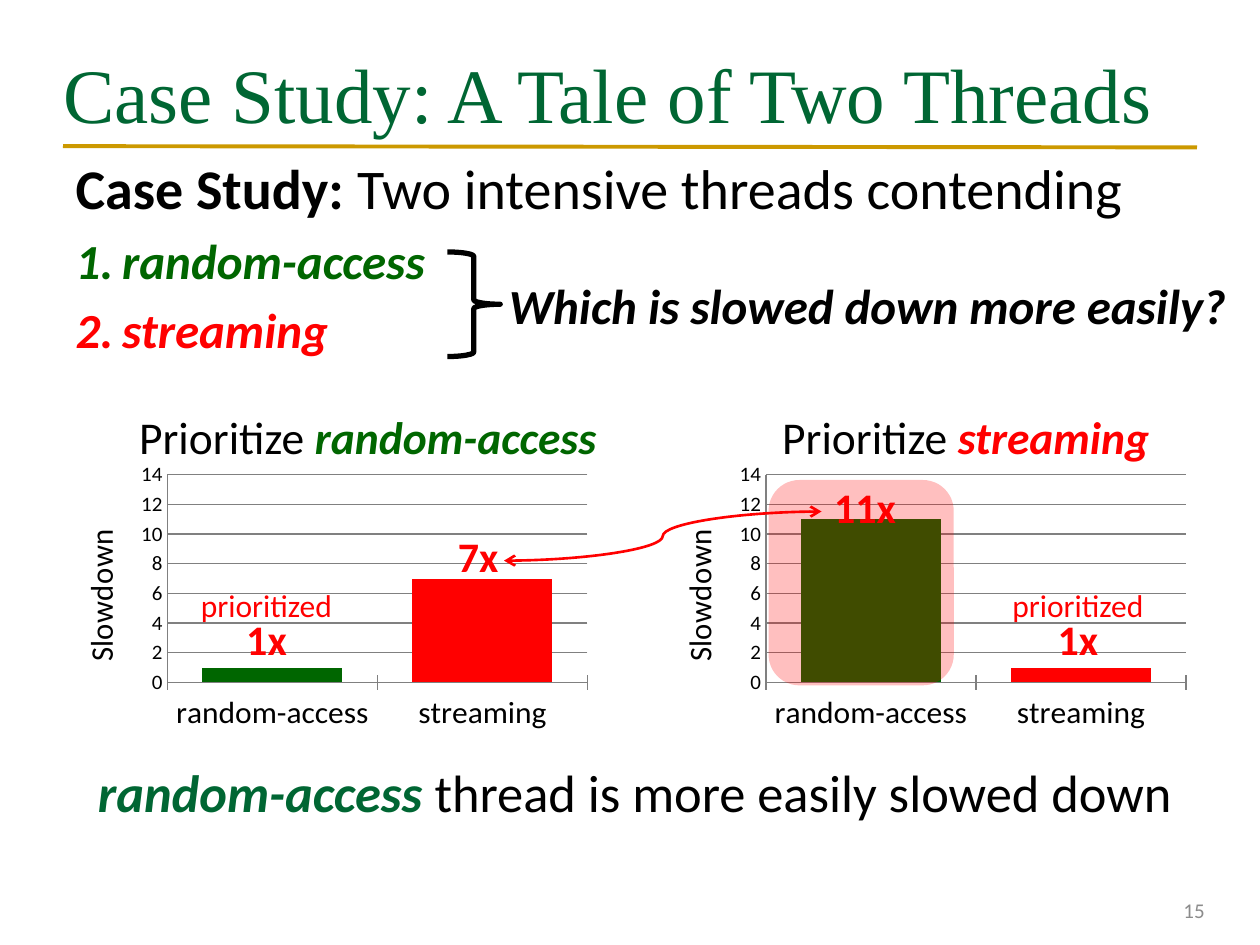
from lxml import etree
from pptx import Presentation
from pptx.chart.data import CategoryChartData
from pptx.dml.color import RGBColor
from pptx.enum.chart import XL_CHART_TYPE, XL_TICK_LABEL_POSITION, XL_TICK_MARK
from pptx.enum.shapes import MSO_CONNECTOR, MSO_SHAPE
from pptx.enum.text import MSO_ANCHOR, MSO_AUTO_SIZE, PP_ALIGN
from pptx.oxml.ns import qn
from pptx.util import Inches, Pt

COLUMN = XL_CHART_TYPE.COLUMN_CLUSTERED
LOW = XL_TICK_LABEL_POSITION.LOW
CROSS, INSIDE, NONE = XL_TICK_MARK.CROSS, XL_TICK_MARK.INSIDE, XL_TICK_MARK.NONE
STRAIGHT, CURVE = MSO_CONNECTOR.STRAIGHT, MSO_CONNECTOR.CURVE
ROUND, BRACE = MSO_SHAPE.ROUNDED_RECTANGLE, MSO_SHAPE.RIGHT_BRACE
TOP, MIDDLE = MSO_ANCHOR.TOP, MSO_ANCHOR.MIDDLE
LEFT, CENTER, RIGHT = PP_ALIGN.LEFT, PP_ALIGN.CENTER, PP_ALIGN.RIGHT
FIXED = MSO_AUTO_SIZE.NONE

COLORS = {
    "black": "000000", "red": "FF0000", "green": "006600", "title": "006633",
    "gold": "CC9900", "grid": "808080", "page": "8C8C8C",
}
THREADS = ("random-access", "streaming")
HUES = ("green", "red")


class Deck:
    """Holds the style and current slide, and draws each kind of element."""

    def __init__(self):
        self.prs = Presentation()
        self.prs.slide_width, self.prs.slide_height = Inches(10), Inches(7.5)
        self.slide = self.prs.slides.add_slide(self.prs.slide_layouts[1])
        self.face = "Calibri"

    def color(self, name):
        return RGBColor.from_string(COLORS[name])

    def font(self, font, size, hue="black", style="", face=None):
        font.name, font.size = face or self.face, Pt(size)
        font.color.rgb = self.color(hue)
        font.bold, font.italic = "b" in style, "i" in style

    def place(self, shape, box):
        shape.left, shape.top, shape.width, shape.height = map(Inches, box)

    def fill(self, para, runs):
        for text, *look in runs:
            run = para.add_run()
            run.text = text
            self.font(run.font, *look)

    def frame(self, shape, paras, align, anchor, pad, space):
        frame = shape.text_frame
        frame.word_wrap, frame.auto_size = True, FIXED
        frame.vertical_anchor = anchor
        frame.margin_left = frame.margin_right = Inches(pad[0])
        frame.margin_top = frame.margin_bottom = Inches(pad[1])
        for i, runs in enumerate(paras):
            para = frame.add_paragraph() if i else frame.paragraphs[0]
            para.alignment = align
            if space:
                para.line_spacing = space
            self.fill(para, runs)
        return frame

    def title(self, box, text):
        shape = self.slide.shapes.title
        self.place(shape, box)
        runs = [(text, 44, "title", "", "Times New Roman")]
        self.frame(shape, [runs], LEFT, MIDDLE, (0, 0.05), None)

    def body(self, box, head, items):
        shape = self.slide.placeholders[1]
        self.place(shape, box)
        frame = self.frame(shape, [head, *items], LEFT, TOP, (0.1, 0.05), None)
        for i, para in enumerate(frame.paragraphs):
            para.level = min(i, 1)
            props = para._p.get_or_add_pPr()
            props.set("marL", str(Inches(0.37)))
            props.set("indent", str(-Inches(0.37)))
            if i:
                etree.SubElement(props, qn("a:buFont")).set("typeface", "+mj-lt")
                etree.SubElement(props, qn("a:buAutoNum")).set("type", "arabicPeriod")
            else:
                etree.SubElement(props, qn("a:buNone"))

    def text(self, box, paras, align=CENTER, anchor=TOP, pad=(0.1, 0.05), space=None):
        shape = self.slide.shapes.add_textbox(*map(Inches, box))
        self.frame(shape, paras, align, anchor, pad, space)

    def shape(self, kind, box):
        shape = self.slide.shapes.add_shape(kind, *map(Inches, box))
        shape.shadow.inherit = False
        return shape

    def glow(self, box, hue, alpha):
        shape = self.shape(ROUND, box)
        shape.fill.solid()
        shape.fill.fore_color.rgb = self.color(hue)
        tint = shape.fill._xPr.find(".//" + qn("a:srgbClr"))
        etree.SubElement(tint, qn("a:alpha")).set("val", str(alpha * 1000))
        shape.line.fill.background()

    def brace(self, box):
        shape = self.shape(BRACE, box)
        shape.fill.background()
        shape.line.color.rgb = self.color("black")
        shape.line.width = Pt(3)

    def line(self, kind, ends, hue, width, heads=False):
        link = self.slide.shapes.add_connector(kind, *map(Inches, ends))
        link.line.color.rgb = self.color(hue)
        link.line.width = Pt(width)
        if heads:
            for tag in ("a:headEnd", "a:tailEnd"):
                etree.SubElement(link.line._ln, qn(tag)).set("type", "arrow")
        etree.SubElement(link._element.spPr, qn("a:effectLst"))

    def rule(self, format):
        format.line.color.rgb = self.color("grid")
        format.line.width = Pt(0.75)

    def chart(self, box, vals):
        data = CategoryChartData()
        data.categories = THREADS
        data.add_series("Series 1", vals)
        chart = self.slide.shapes.add_chart(COLUMN, *map(Inches, box), data).chart
        chart.has_legend = chart.has_title = False
        self.font(chart.font, 18)
        plot = chart.plots[0]
        plot.gap_width, plot.vary_by_categories = 50, False
        for i, hue in enumerate(HUES):
            fill = plot.series[0].points[i].format.fill
            fill.solid()
            fill.fore_color.rgb = self.color(hue)
        cat, val = chart.category_axis, chart.value_axis
        cat.tick_label_position, cat.major_tick_mark = LOW, CROSS
        val.major_tick_mark, val.minor_tick_mark = INSIDE, NONE
        val.minimum_scale, val.maximum_scale, val.major_unit = 0, 14, 2
        self.font(cat.tick_labels.font, 18)
        self.font(val.tick_labels.font, 12)
        for part in (cat.format, val.format, val.major_gridlines.format):
            self.rule(part)
        frame = val.axis_title.text_frame
        frame.text = "Slowdown"
        self.font(frame.paragraphs[0].runs[0].font, 18)
        self.layout(chart)

    def layout(self, chart):
        area = chart._chartSpace.find(".//" + qn("c:plotArea"))
        for old in area.findall(qn("c:layout")):
            area.remove(old)
        outer = etree.Element(qn("c:layout"))
        inner = etree.SubElement(outer, qn("c:manualLayout"))
        for tag, val in (("layoutTarget", "inner"), ("xMode", "edge"), ("yMode", "edge"),
                         ("x", "0.21"), ("y", "0.02"), ("w", "0.77"), ("h", "0.78")):
            etree.SubElement(inner, qn("c:" + tag)).set("val", val)
        area.insert(0, outer)


def main():
    deck = Deck()
    deck.line(STRAIGHT, (0.5, 1.16, 9.5, 1.17), "gold", 2.25)
    deck.title((0.5, 0.3, 9, 0.87), "Case Study: A Tale of Two Threads")
    head = [("Case Study:", 32, "black", "b"), (" Two intensive threads contending", 32)]
    items = [[(name, 28, hue, "bi")] for name, hue in zip(THREADS, HUES)]
    deck.body((0.5, 1.17, 9, 1.92), head, items)
    deck.brace((3.55, 2, 0.42, 0.83))
    deck.text((3.94, 2.14, 5.92, 0.57),
              [[("Which is slowed down more easily?", 28, "black", "bi")]], LEFT)

    for left, vals in ((0.42, (1, 7)), (5.17, (11, 1))):
        deck.chart((left, 3.67, 4.33, 2.17), vals)
    deck.glow((6.1, 3.81, 1.47, 1.63), "red", 25)

    heads = ((0.92, 4), (6.04, 3.25))
    for (left, width), name, hue in zip(heads, THREADS, HUES):
        runs = [("Prioritize ", 26), (name, 26, hue, "bi")]
        deck.text((left, 3.25, width, 0.44), [runs], pad=(0.1, 0))
    for left in (1.42, 7.86):
        paras = [[("prioritized", 18, "red")], [("1x", 24, "red", "b")]]
        deck.text((left, 4.66, 1.39, 0.68), paras, space=0.8)
    for left, top, width, label in ((3.59, 4.23, 0.41, "7x"), (6.52, 3.84, 0.69, "11x")):
        deck.text((left, top, width, 0.44), [[(label, 24, "red", "b")]],
                  anchor=MIDDLE, pad=(0, 0.05), space=0.8)
    deck.line(CURVE, (4, 4.45, 6.52, 4.06), "red", 1.5, heads=True)

    deck.text((0.58, 6.08, 8.92, 0.52),
              [[("random-access ", 30, "title", "bi"),
                ("thread is more easily slowed down", 30)]], space=0.8)
    deck.text((7.33, 7.02, 2.33, 0.4), [[("15", 12, "page")]], RIGHT, MIDDLE)
    deck.prs.save("out.pptx")


if __name__ == "__main__":
    main()
